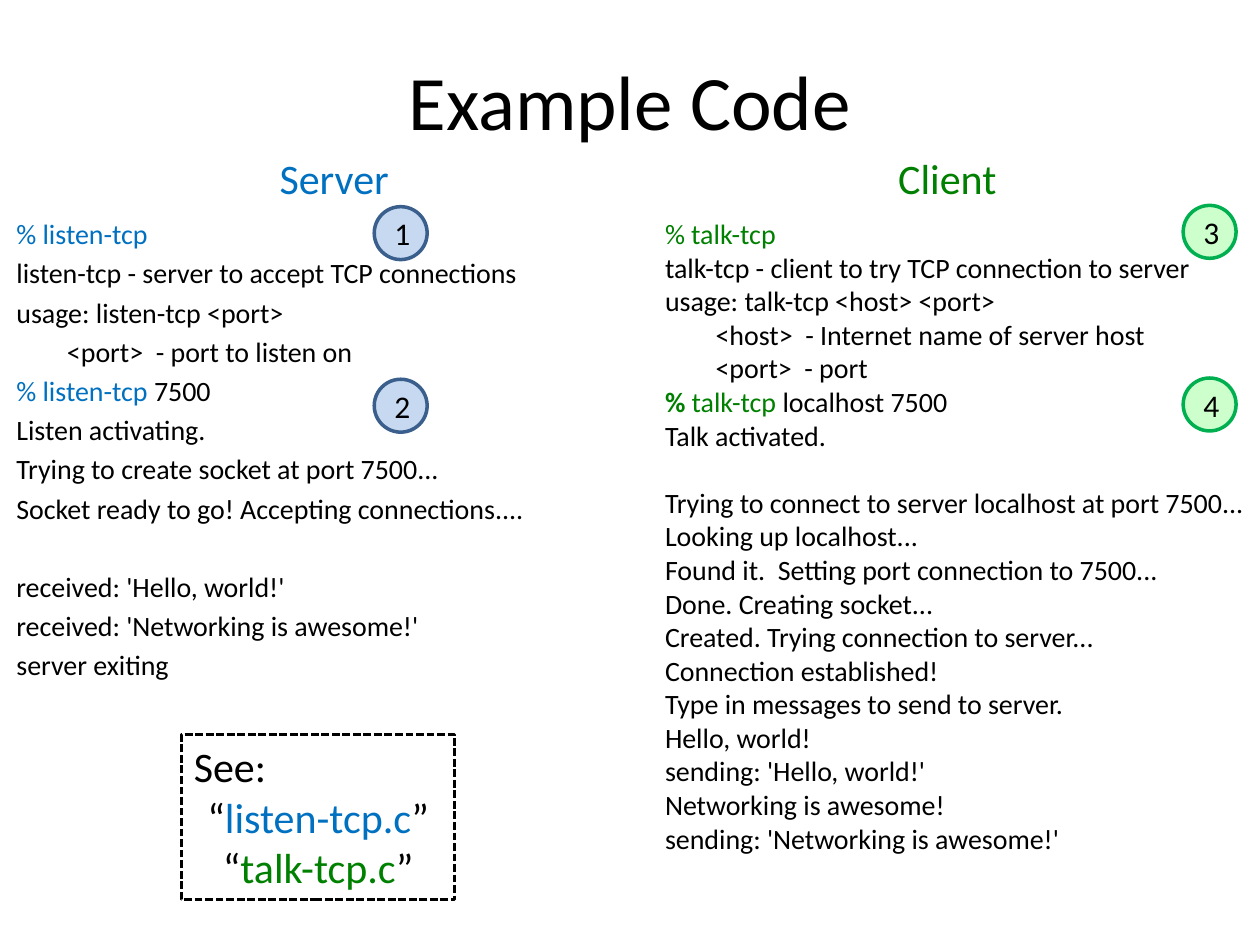
import pptx
import pptx.dml.color
import pptx.enum.dml
import pptx.enum.shapes
import pptx.enum.text
import pptx.oxml
import pptx.oxml.ns
import pptx.util

Pt = pptx.util.Pt
RGBColor = pptx.dml.color.RGBColor
PP_ALIGN = pptx.enum.text.PP_ALIGN
MSO_ANCHOR = pptx.enum.text.MSO_ANCHOR
MSO_AUTO_SIZE = pptx.enum.text.MSO_AUTO_SIZE
MSO_SHAPE = pptx.enum.shapes.MSO_SHAPE

BLACK = RGBColor(0x00, 0x00, 0x00)
SERVER_BLUE = RGBColor(0x00, 0x70, 0xC0)
CLIENT_GREEN = RGBColor(0x00, 0x80, 0x00)
BLUE_FILL = RGBColor(0xC6, 0xD9, 0xF1)
BLUE_LINE = RGBColor(0x3A, 0x5F, 0x8C)
GREEN_FILL = RGBColor(0xCC, 0xFF, 0xCC)
GREEN_LINE = RGBColor(0x00, 0xB0, 0x50)

FONT = "Calibri"
CODE_SIZE = 16
CODE_LINE = 19.2
CODE_INDENT = 28.9

TITLE = "Example Code"
SERVER_BLOCKS = [
    [
        [("% listen-tcp", SERVER_BLUE)],
        "listen-tcp - server to accept TCP connections",
        "usage: listen-tcp <port>",
        "\t<port>  - port to listen on",
        [("% listen-tcp ", SERVER_BLUE), ("7500", BLACK)],
        "Listen activating.",
        "Trying to create socket at port 7500...",
        "Socket ready to go! Accepting connections....",
    ],
    [
        "received: 'Hello, world!'",
        "received: 'Networking is awesome!'",
        "server exiting",
    ],
]
CLIENT_BLOCKS = [
    [
        [("% talk-tcp", CLIENT_GREEN)],
        "talk-tcp - client to try TCP connection to server",
        "usage: talk-tcp <host> <port>",
        "\t<host>  - Internet name of server host",
        "\t<port>  - port",
        [("% ", CLIENT_GREEN, True), ("talk-tcp ", CLIENT_GREEN), ("localhost 7500", BLACK)],
        "Talk activated.",
    ],
    [
        "Trying to connect to server localhost at port 7500...",
        "Looking up localhost...",
        "Found it.  Setting port connection to 7500...",
        "Done. Creating socket...",
        "Created. Trying connection to server...",
        "Connection established!",
        "Type in messages to send to server.",
        "Hello, world!",
        "sending: 'Hello, world!'",
        "Networking is awesome!",
        "sending: 'Networking is awesome!'",
    ],
]
HEADINGS = [
    ("Server", SERVER_BLUE, 152.64, 77.76),
    ("Client", CLIENT_GREEN, 506.16, 71.28),
]
SOURCE_FILES = [("listen-tcp.c", SERVER_BLUE), ("talk-tcp.c", CLIENT_GREEN)]
STEP_SIZE = 30.24
STEP_GAP = 98.64
STEPS = [
    (("1", "2"), 213.84, 118.08, BLUE_FILL, BLUE_LINE),
    (("3", "4"), 676.08, 117.36, GREEN_FILL, GREEN_LINE),
]


def place(shape, left, top, width, height):
    shape.left, shape.top, shape.width, shape.height = map(Pt, (left, top, width, height))


def add_paragraph(frame, runs, size, alignment=PP_ALIGN.LEFT):
    first = frame.paragraphs[0]
    paragraph = frame.add_paragraph() if first.runs else first
    paragraph.alignment = alignment
    paragraph.font.size = Pt(size)
    paragraph.font.name = FONT
    for text, color, *bold in runs:
        run = paragraph.add_run()
        run.text = text
        run.font.color.rgb = color
        if bold:
            run.font.bold = True
    return paragraph


def write_code(frame, blocks, spacing):
    for block_number, block in enumerate(blocks):
        for line_number, line in enumerate(block):
            indented = line[0] == "\t"
            runs = [(line.strip(), BLACK)] if isinstance(line, str) else line
            paragraph = add_paragraph(frame, runs, CODE_SIZE)
            new_block = block_number > 0 and line_number == 0
            paragraph.space_before = Pt(spacing + (CODE_LINE + spacing if new_block else 0))
            properties = paragraph._p.get_or_add_pPr()
            properties.set("marL", str(Pt(CODE_INDENT if indented else 0)))
            properties.set("indent", "0")
            properties.append(pptx.oxml.parse_xml(f"<a:buNone {pptx.oxml.ns.nsdecls('a')}/>"))


def add_text_box(slide, *bounds):
    shape = slide.shapes.add_textbox(*map(Pt, bounds))
    shape.text_frame.word_wrap = False
    return shape.text_frame


def add_shape(slide, kind, bounds, line_color, line_width):
    shape = slide.shapes.add_shape(kind, *map(Pt, bounds))
    shape.shadow.inherit = False
    shape.line.color.rgb = line_color
    shape.line.width = Pt(line_width)
    return shape


def main():
    presentation = pptx.Presentation()
    presentation.slide_width, presentation.slide_height = Pt(720), Pt(540)
    slide = presentation.slides.add_slide(presentation.slide_layouts[1])

    title = slide.shapes.title
    place(title, 36, 12.24, 648, 90)
    title.text_frame.vertical_anchor = MSO_ANCHOR.MIDDLE
    add_paragraph(title.text_frame, [(TITLE, BLACK)], 44, PP_ALIGN.CENTER)

    server = slide.placeholders[1]
    place(server, 2.16, 120.24, 390.24, 356.4)
    server.text_frame.auto_size = MSO_AUTO_SIZE.NONE
    write_code(server.text_frame, SERVER_BLOCKS, 3.2)
    write_code(add_text_box(slide, 372.96, 120.24, 349.92, 383.04), CLIENT_BLOCKS, 0)

    for text, color, left, width in HEADINGS:
        add_paragraph(add_text_box(slide, left, 83.52, width, 36), [(text, color)], 24)

    see_box = add_shape(slide, MSO_SHAPE.RECTANGLE, (103.68, 419.76, 156.24, 94.32), BLACK, 1.5)
    see_box.fill.background()
    see_box.line.dash_style = pptx.enum.dml.MSO_LINE.SQUARE_DOT
    see_box.text_frame.vertical_anchor = MSO_ANCHOR.TOP
    add_paragraph(see_box.text_frame, [("See:", BLACK)], 24)
    for name, color in SOURCE_FILES:
        runs = [("“", BLACK), (name, color), ("”", BLACK)]
        add_paragraph(see_box.text_frame, runs, 24, PP_ALIGN.CENTER)

    for labels, left, top, fill_color, line_color in STEPS:
        for row, label in enumerate(labels):
            bounds = (left, top + row * STEP_GAP, STEP_SIZE, STEP_SIZE)
            step = add_shape(slide, MSO_SHAPE.OVAL, bounds, line_color, 2)
            step.fill.solid()
            step.fill.fore_color.rgb = fill_color
            step.text_frame.vertical_anchor = MSO_ANCHOR.MIDDLE
            add_paragraph(step.text_frame, [(label, BLACK)], 18, PP_ALIGN.CENTER)

    presentation.save("out.pptx")


if __name__ == "__main__":
    main()
